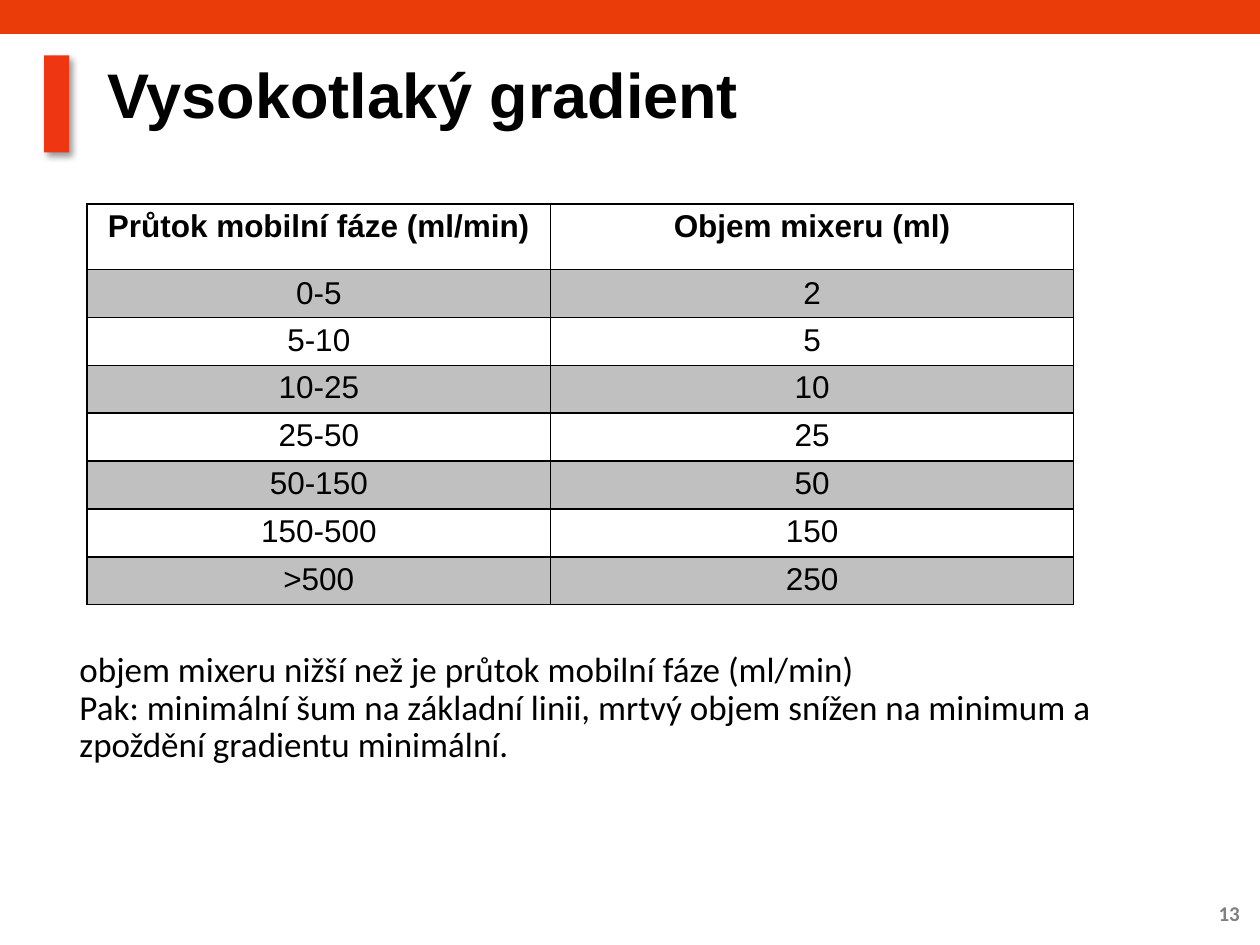
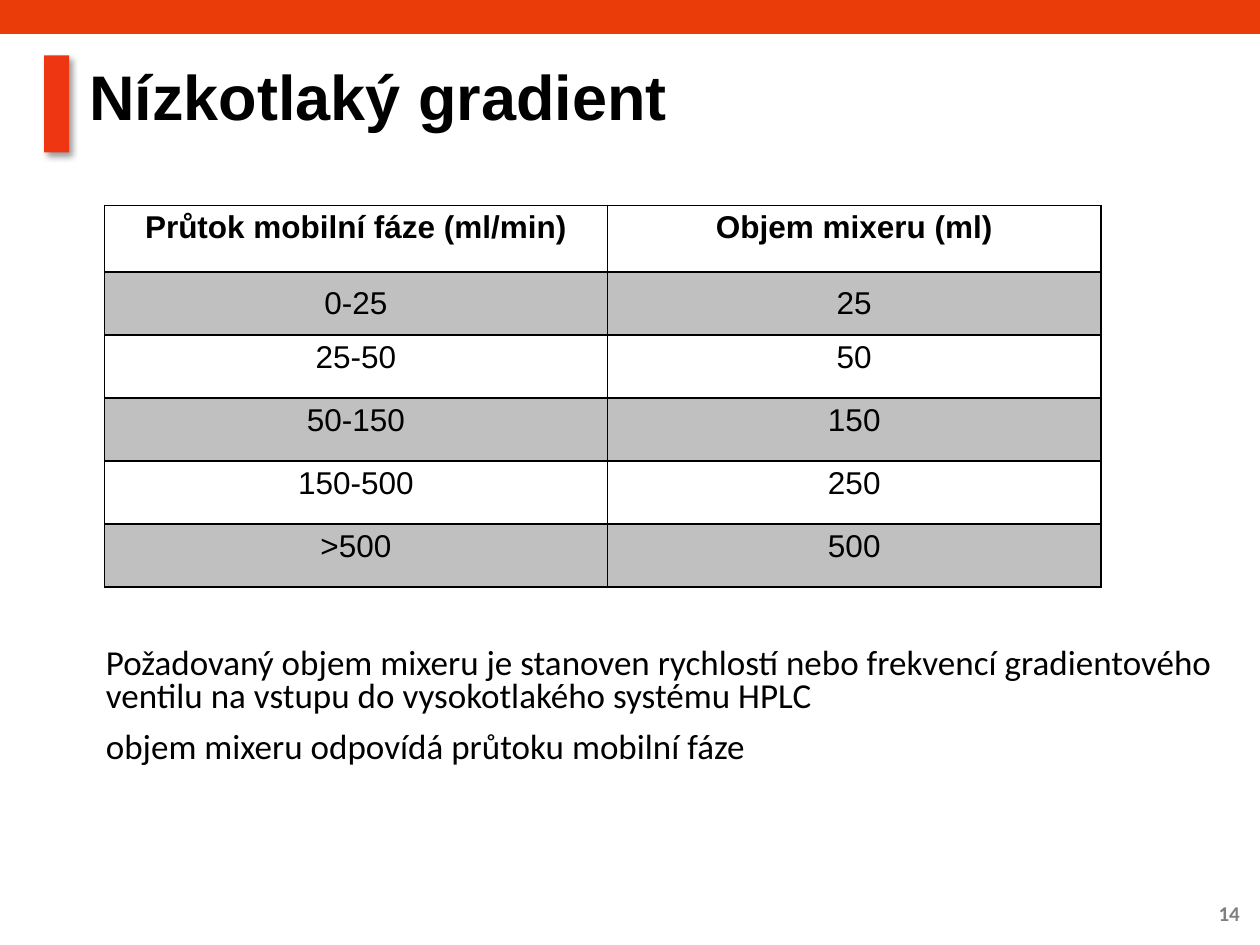
from dataclasses import dataclass

from lxml.etree import SubElement
from pptx import Presentation
from pptx.dml.color import RGBColor
from pptx.enum.shapes import MSO_SHAPE as Preset
from pptx.enum.text import MSO_ANCHOR as Anchor, PP_ALIGN as Align
from pptx.oxml.ns import qn
from pptx.util import Emu, Inches, Pt

COLORS = {
    "band": "E93C09",
    "marker": "EE3712",
    "paper": "FFFFFF",
    "ink": "000000",
    "stripe": "C0C0C0",
    "number": "808080",
}
SLIDE_WIDTH, SLIDE_HEIGHT = Inches(10), Inches(7.5)
GRID_COLUMNS, GRID_ROWS = 100, 75
HEADINGS = ("Průtok mobilní fáze (ml/min)", "Objem mixeru (ml)")


def across(columns: float) -> Emu:
    return Emu(round(SLIDE_WIDTH * columns / GRID_COLUMNS))


def down(rows: float) -> Emu:
    return Emu(round(SLIDE_HEIGHT * rows / GRID_ROWS))


@dataclass(frozen=True)
class Area:
    column: float
    row: float
    columns: float
    rows: float

    def place(self) -> tuple[Emu, Emu, Emu, Emu]:
        return across(self.column), down(self.row), across(self.columns), down(self.rows)


@dataclass(frozen=True)
class Lettering:
    font: str
    size: int
    color: str = "ink"
    bold: bool = False
    align: Align = Align.LEFT
    line_spacing: float = 1.0
    gap: int = 0


@dataclass(frozen=True)
class MixerTable:
    column: float
    row: float
    widths: tuple[float, float]
    heading_height: float
    row_height: float
    volumes: tuple[tuple[str, str], ...]


@dataclass(frozen=True)
class GradientSlide:
    number: int
    title: str
    title_area: Area
    mixers: MixerTable
    remarks: tuple[str, ...]
    remarks_area: Area
    remarks_lettering: Lettering


BAND_AREA = Area(0, 0, GRID_COLUMNS, 2.7)
MARKER_AREA = Area(3.5, 4.4, 2, 7.7)
NUMBER_AREA = Area(92.5, 70.5, 6.8, 4)

TITLE = Lettering("Arial", 36, bold=True, line_spacing=0.9)
NUMBER = Lettering("Calibri", 12, "number", True, Align.RIGHT)
HEADING = Lettering("Arial", 18, bold=True, align=Align.CENTER)
VOLUME = Lettering("Arial", 18, align=Align.CENTER)

SLIDES = (
    GradientSlide(
        13,
        "Vysokotlaký gradient",
        Area(7.6, 4.6, 90.5, 9.8),
        MixerTable(6.9, 16.2, (36.8, 41.5), 5.2, 3.68, (
            ("0-5", "2"), ("5-10", "5"), ("10-25", "10"), ("25-50", "25"),
            ("50-150", "50"), ("150-500", "150"), (">500", "250"),
        )),
        (
            "objem mixeru nižší než je průtok mobilní fáze (ml/min)",
            "Pak: minimální šum na základní linii, mrtvý objem snížen na minimum "
            "a zpoždění gradientu minimální.",
        ),
        Area(5.4, 51.3, 90.5, 9.8),
        Lettering("Calibri", 20, line_spacing=0.9),
    ),
    GradientSlide(
        14,
        "Nízkotlaký gradient",
        Area(6.2, 4.8, 90.5, 9.8),
        MixerTable(8.3, 16.3, (39.9, 39.2), 5.3, 5, (
            ("0-25", "25"), ("25-50", "50"), ("50-150", "150"),
            ("150-500", "250"), (">500", "500"),
        )),
        (
            "Požadovaný objem mixeru je stanoven rychlostí nebo frekvencí "
            "gradientového ventilu na vstupu do vysokotlakého systému HPLC",
            "objem mixeru odpovídá průtoku mobilní fáze",
        ),
        Area(7.5, 51, 90.5, 11.1),
        Lettering("Calibri", 20, line_spacing=0.8, gap=10),
    ),
)


def rgb(name: str) -> RGBColor:
    return RGBColor.from_string(COLORS[name])


def paint(target, color: str) -> None:
    target.fill.solid()
    target.fill.fore_color.rgb = rgb(color)


def write(frame, lines: tuple[str, ...], lettering: Lettering) -> None:
    frame.text = "\n".join(lines)
    for position, paragraph in enumerate(frame.paragraphs):
        paragraph.alignment = lettering.align
        paragraph.line_spacing = lettering.line_spacing
        paragraph.space_before = Pt(lettering.gap if position else 0)
        for run in paragraph.runs:
            run.font.name = lettering.font
            run.font.size = Pt(lettering.size)
            run.font.bold = lettering.bold
            run.font.color.rgb = rgb(lettering.color)


def draw_text(slide, area: Area, lines: tuple[str, ...], lettering: Lettering):
    box = slide.shapes.add_textbox(*area.place())
    frame = box.text_frame
    frame.word_wrap = True
    frame.margin_left = frame.margin_right = across(0.9)
    frame.margin_top = frame.margin_bottom = down(0.45)
    write(frame, lines, lettering)
    return box


def draw_block(slide, area: Area, color: str):
    block = slide.shapes.add_shape(Preset.RECTANGLE, *area.place())
    block.shadow.inherit = False
    paint(block, color)
    block.line.fill.background()
    return block


def cast_shadow(block) -> None:
    effects = block._element.spPr.find(qn("a:effectLst"))
    shadow = SubElement(effects, qn("a:outerShdw"), blurRad=str(Pt(4)),
                        dist=str(Pt(3)), dir="2700000", algn="tl", rotWithShape="0")
    tone = SubElement(shadow, qn("a:srgbClr"), val=COLORS["ink"])
    SubElement(tone, qn("a:alpha"), val="40000")


def draw_frame(slide, number: int) -> None:
    draw_block(slide, BAND_AREA, "band")
    cast_shadow(draw_block(slide, MARKER_AREA, "marker"))
    page = draw_text(slide, NUMBER_AREA, (str(number),), NUMBER)
    page.text_frame.vertical_anchor = Anchor.MIDDLE


def outline(cell) -> None:
    properties = cell._tc.get_or_add_tcPr()
    for position, side in enumerate(("lnL", "lnR", "lnT", "lnB")):
        border = properties.makeelement(qn(f"a:{side}"), {"w": str(Pt(1))})
        ink = SubElement(border, qn("a:solidFill"))
        SubElement(ink, qn("a:srgbClr"), val=COLORS["ink"])
        properties.insert(position, border)


def draw_mixers(slide, mixers: MixerTable) -> None:
    entries = (HEADINGS, *mixers.volumes)
    heights = [mixers.heading_height] + [mixers.row_height] * len(mixers.volumes)
    area = Area(mixers.column, mixers.row, sum(mixers.widths), sum(heights))
    table = slide.shapes.add_table(len(entries), len(HEADINGS), *area.place()).table
    table.first_row = table.horz_banding = False
    for column, width in zip(table.columns, mixers.widths):
        column.width = across(width)
    for index, (row, height, entry) in enumerate(zip(table.rows, heights, entries)):
        row.height = down(height)
        for cell, words in zip(row.cells, entry):
            cell.margin_left = cell.margin_right = across(0.9)
            cell.margin_top = cell.margin_bottom = down(0.4)
            cell.vertical_anchor = Anchor.MIDDLE if index == 1 else Anchor.TOP
            paint(cell, "stripe" if index % 2 else "paper")
            outline(cell)
            write(cell.text_frame, (words,), VOLUME if index else HEADING)


def draw_slide(deck, content: GradientSlide) -> None:
    slide = deck.slides.add_slide(deck.slide_layouts[6])
    draw_frame(slide, content.number)
    title = draw_text(slide, content.title_area, (content.title,), TITLE)
    remarks = draw_text(slide, content.remarks_area, content.remarks,
                        content.remarks_lettering)
    for panel in (title, remarks):
        paint(panel, "paper")
    draw_mixers(slide, content.mixers)


def main() -> None:
    deck = Presentation()
    deck.slide_width, deck.slide_height = SLIDE_WIDTH, SLIDE_HEIGHT
    for content in SLIDES:
        draw_slide(deck, content)
    deck.save("out.pptx")


if __name__ == "__main__":
    main()
